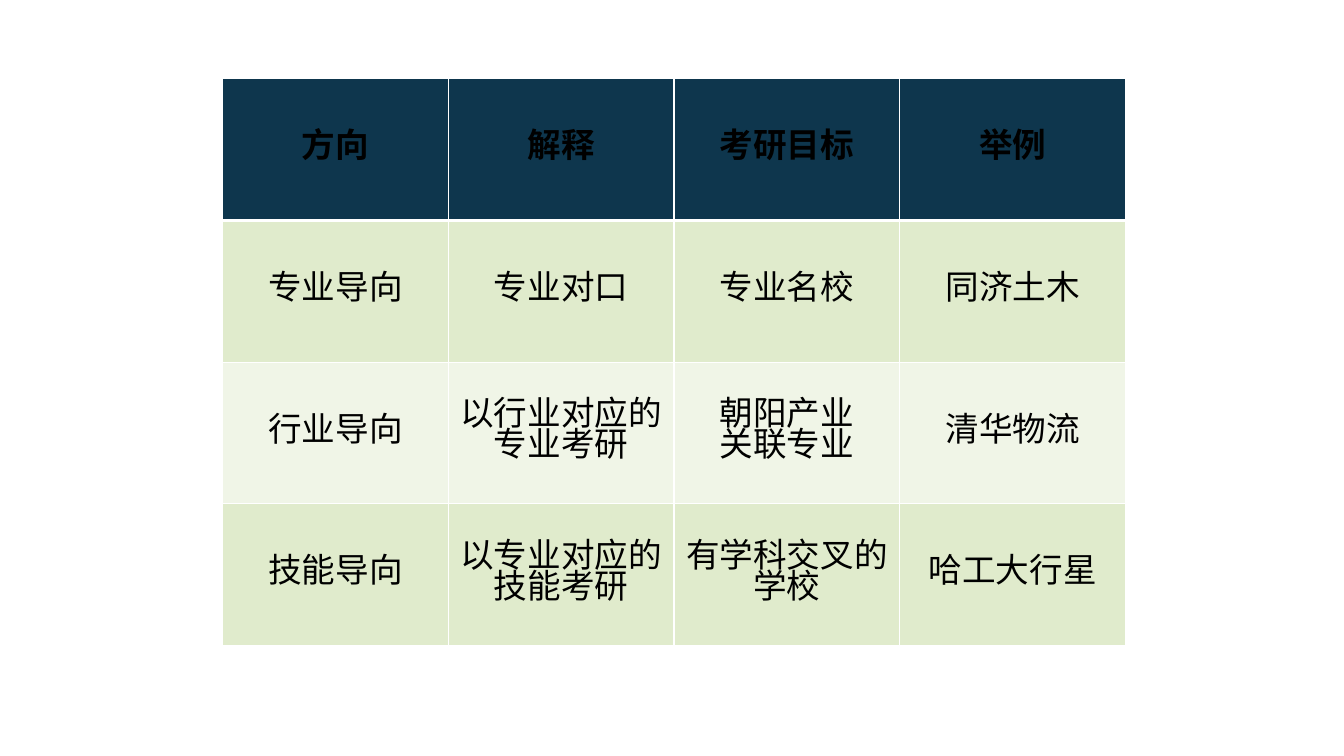
"""Build a slide with a table of directions for postgraduate study."""
from dataclasses import dataclass

from lxml import etree
from pptx import Presentation, util as u
from pptx.dml.color import RGBColor
from pptx.enum import lang, text
from pptx.oxml import ns

PX = 9525
SLIDE_WIDTH, SLIDE_HEIGHT = 1280, 720
TABLE_LEFT, TABLE_TOP = 212, 75
COLUMN_WIDTH, ROW_HEIGHT = 215, 135
FONT = "League Spartan"
COLORS = {
    "header": "0E364D",
    "band": "E0EBCC",
    "plain": "F0F5E7",
    "text": "000000",
    "border": "FFFFFF",
}


@dataclass(frozen=True)
class TableRow:
    texts: tuple[str, ...]
    fill: str
    bold: bool = False
    top: int = 1
    bottom: int = 1


ROWS = (
    TableRow(("方向", "解释", "考研目标", "举例"), "header", bold=True, bottom=3),
    TableRow(("专业导向", "专业对口", "专业名校", "同济土木"), "band", top=3),
    TableRow(("行业导向", "以行业对应的专业考研", "朝阳产业\n关联专业", "清华物流"), "plain"),
    TableRow(("技能导向", "以专业对应的技能考研", "有学科交叉的学校", "哈工大行星"), "band"),
)


def px(length: int) -> u.Emu:
    return u.Emu(length * PX)


def write_text(frame, content: str, *, size: int = 24, bold: bool = False,
               color: str = "text") -> None:
    frame.text = content
    for paragraph in frame.paragraphs:
        paragraph.alignment = text.PP_ALIGN.CENTER
        for run in paragraph.runs:
            font = run.font
            font.name, font.size, font.bold = FONT, u.Pt(size), bold
            font.color.rgb = RGBColor.from_string(COLORS[color])
            font.language_id = lang.MSO_LANGUAGE_ID.SIMPLIFIED_CHINESE
            properties = run._r.get_or_add_rPr()
            etree.SubElement(properties, ns.qn("a:ea"), typeface=FONT)


def add_borders(cell, row: TableRow) -> None:
    properties = cell._tc.get_or_add_tcPr()
    widths = {"lnL": 1, "lnR": 1, "lnT": row.top, "lnB": row.bottom}
    for side, width in widths.items():
        line = etree.SubElement(properties, ns.qn(f"a:{side}"), w=str(u.Pt(width)))
        fill = etree.SubElement(line, ns.qn("a:solidFill"))
        etree.SubElement(fill, ns.qn("a:srgbClr"), val=COLORS["border"])


def fill_row(table, index: int, row: TableRow) -> None:
    table.rows[index].height = px(ROW_HEIGHT)
    for column, content in enumerate(row.texts):
        cell = table.cell(index, column)
        add_borders(cell, row)
        cell.fill.solid()
        cell.fill.fore_color.rgb = RGBColor.from_string(COLORS[row.fill])
        cell.vertical_anchor = text.MSO_ANCHOR.MIDDLE
        write_text(cell.text_frame, content, bold=row.bold)


def main() -> None:
    presentation = Presentation()
    presentation.slide_width = px(SLIDE_WIDTH)
    presentation.slide_height = px(SLIDE_HEIGHT)
    slide = presentation.slides.add_slide(presentation.slide_layouts[6])
    columns = len(ROWS[0].texts)
    table = slide.shapes.add_table(
        len(ROWS), columns, px(TABLE_LEFT), px(TABLE_TOP),
        px(COLUMN_WIDTH * columns), px(ROW_HEIGHT * len(ROWS))).table
    for index, row in enumerate(ROWS):
        fill_row(table, index, row)
    presentation.save("out.pptx")


if __name__ == "__main__":
    main()
